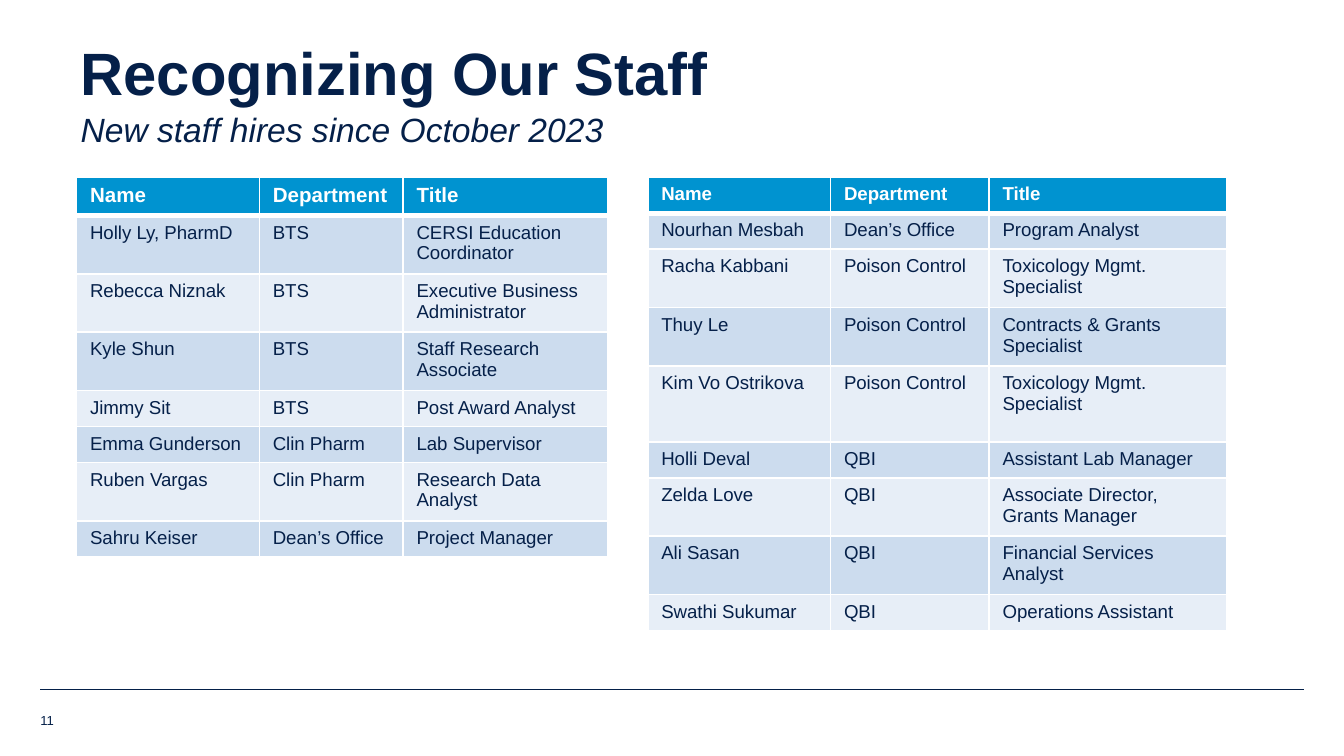
from lxml import etree
from pptx import Presentation
from pptx.dml.color import RGBColor
from pptx.enum.shapes import MSO_CONNECTOR
from pptx.enum.text import MSO_ANCHOR, MSO_AUTO_SIZE, PP_ALIGN
from pptx.oxml.ns import qn
from pptx.util import Emu, Inches, Pt

STRAIGHT = MSO_CONNECTOR.STRAIGHT
TOP, BOTTOM = MSO_ANCHOR.TOP, MSO_ANCHOR.BOTTOM
LEFT = PP_ALIGN.LEFT
FIXED = MSO_AUTO_SIZE.NONE

COLORS = {
    "navy": "052049",
    "blue": "0093D0",
    "band": "CCDCEE",
    "pale": "E7EEF7",
    "white": "FFFFFF",
}
FONT = "Arial"
COLUMNS, ROWS = 100, 56.25

HEADINGS = ("Name", "Department", "Title")
LEFT_STAFF = [
    ("Holly Ly, PharmD", "BTS", "CERSI Education Coordinator"),
    ("Rebecca Niznak", "BTS", "Executive Business Administrator"),
    ("Kyle Shun", "BTS", "Staff Research Associate"),
    ("Jimmy Sit", "BTS", "Post Award Analyst"),
    ("Emma Gunderson", "Clin Pharm", "Lab Supervisor"),
    ("Ruben Vargas", "Clin Pharm", "Research Data Analyst"),
    ("Sahru Keiser", "Dean’s Office", "Project Manager"),
]
RIGHT_STAFF = [
    ("Nourhan Mesbah", "Dean’s Office", "Program Analyst"),
    ("Racha Kabbani", "Poison Control", "Toxicology Mgmt. Specialist"),
    ("Thuy Le", "Poison Control", "Contracts & Grants Specialist"),
    ("Kim Vo Ostrikova", "Poison Control", "Toxicology Mgmt. Specialist"),
    ("Holli Deval", "QBI", "Assistant Lab Manager"),
    ("Zelda Love", "QBI", "Associate Director, Grants Manager"),
    ("Ali Sasan", "QBI", "Financial Services Analyst"),
    ("Swathi Sukumar", "QBI", "Operations Assistant"),
]
TALL_ROWS = {"Kim Vo Ostrikova": 5.65}


def color(name):
    return RGBColor.from_string(COLORS[name])


def write(para, text, size=10, ink="navy", bold=False, italic=False):
    span = para.add_run()
    span.text = text
    span.font.name, span.font.size = FONT, Pt(size)
    span.font.bold, span.font.italic = bold, italic
    span.font.color.rgb = color(ink)


class StaffSlide:
    def __init__(self, deck):
        self.column = deck.slide_width / COLUMNS
        self.row = deck.slide_height / ROWS
        self.slide = deck.slides.add_slide(deck.slide_layouts[1])

    def place(self, left, top, width, height):
        return (Emu(round(left * self.column)), Emu(round(top * self.row)),
                Emu(round(width * self.column)), Emu(round(height * self.row)))

    def placeholder(self, index, area, text, anchor=TOP, spacing=1, after=0,
                    **style):
        box = self.slide.placeholders[index]
        box.left, box.top, box.width, box.height = self.place(*area)
        frame = box.text_frame
        frame.auto_size, frame.word_wrap = FIXED, True
        frame.vertical_anchor = anchor
        para = frame.paragraphs[0]
        para.alignment, para.line_spacing = LEFT, spacing
        para.space_before, para.space_after = Pt(0), Pt(after)
        properties = para._p.get_or_add_pPr()
        properties.set("marL", "0")
        properties.set("indent", "0")
        etree.SubElement(properties, qn("a:buNone"))
        write(para, text, **style)

    def label(self, area, text, **style):
        frame = self.slide.shapes.add_textbox(*self.place(*area)).text_frame
        frame.margin_left = frame.margin_right = 0
        frame.margin_top = frame.margin_bottom = 0
        frame.word_wrap, frame.vertical_anchor = True, BOTTOM
        write(frame.paragraphs[0], text, **style)

    def rule(self, left, right, top, weight):
        x, y, width, _ = self.place(left, top, right - left, 0)
        line = self.slide.shapes.add_connector(STRAIGHT, x, y, x + width, y)
        line.line.color.rgb = color("navy")
        line.line.width = Pt(weight)
        etree.SubElement(line._element.spPr, qn("a:effectLst"))

    def borders(self, cell, **weights):
        properties = cell._tc.get_or_add_tcPr()
        for side in ("L", "R", "T", "B"):
            line = etree.SubElement(properties, qn(f"a:ln{side}"),
                                    w=str(Pt(weights.get(side, 1))))
            fill = etree.SubElement(line, qn("a:solidFill"))
            etree.SubElement(fill, qn("a:srgbClr"), val=COLORS["white"])

    def table(self, left, top, height, widths, staff, heading_size):
        records = [HEADINGS, *staff]
        area = self.place(left, top, sum(widths), height)
        holder = self.slide.shapes.add_table(len(records), len(widths), *area)
        table = holder.table
        for column, width in zip(table.columns, widths):
            column.width = Emu(round(width * self.column))
        for index, (row, record) in enumerate(zip(table.rows, records)):
            row.height = Emu(round(TALL_ROWS.get(record[0], 0) * self.row))
            heading = index == 0
            fill = "blue" if heading else ("pale", "band")[index % 2]
            thick = {0: {"B": 3}, 1: {"T": 3}}.get(index, {})
            for cell, text in zip(row.cells, record):
                self.borders(cell, **thick)
                cell.fill.solid()
                cell.fill.fore_color.rgb = color(fill)
                write(cell.text_frame.paragraphs[0], text, bold=heading,
                      size=heading_size if heading else 10,
                      ink="white" if heading else "navy")
        holder.height = area[3]


def main():
    deck = Presentation()
    deck.slide_width = Inches(10)
    deck.slide_height = deck.slide_width * 9 // 16
    page = StaffSlide(deck)
    page.rule(3, 97, 51.3, 0.25)
    page.label((3, 52.9, 2.7, 1.3), "11", size=7)
    page.table(48.2, 13.2, 34, (13.6, 11.8, 17.7), RIGHT_STAFF, 10)
    page.table(5.7, 13.2, 28.2, (13.6, 10.7, 15.2), LEFT_STAFF, 11)
    page.placeholder(1, (5, 7.6, 84.8, 3.7),
                     "New staff hires since October 2023",
                     size=18, italic=True, after=6)
    page.placeholder(0, (5, 3.5, 84.8, 5), "Recognizing Our Staff",
                     size=32, bold=True, anchor=BOTTOM, spacing=0.85)
    deck.save("out.pptx")


if __name__ == "__main__":
    main()
